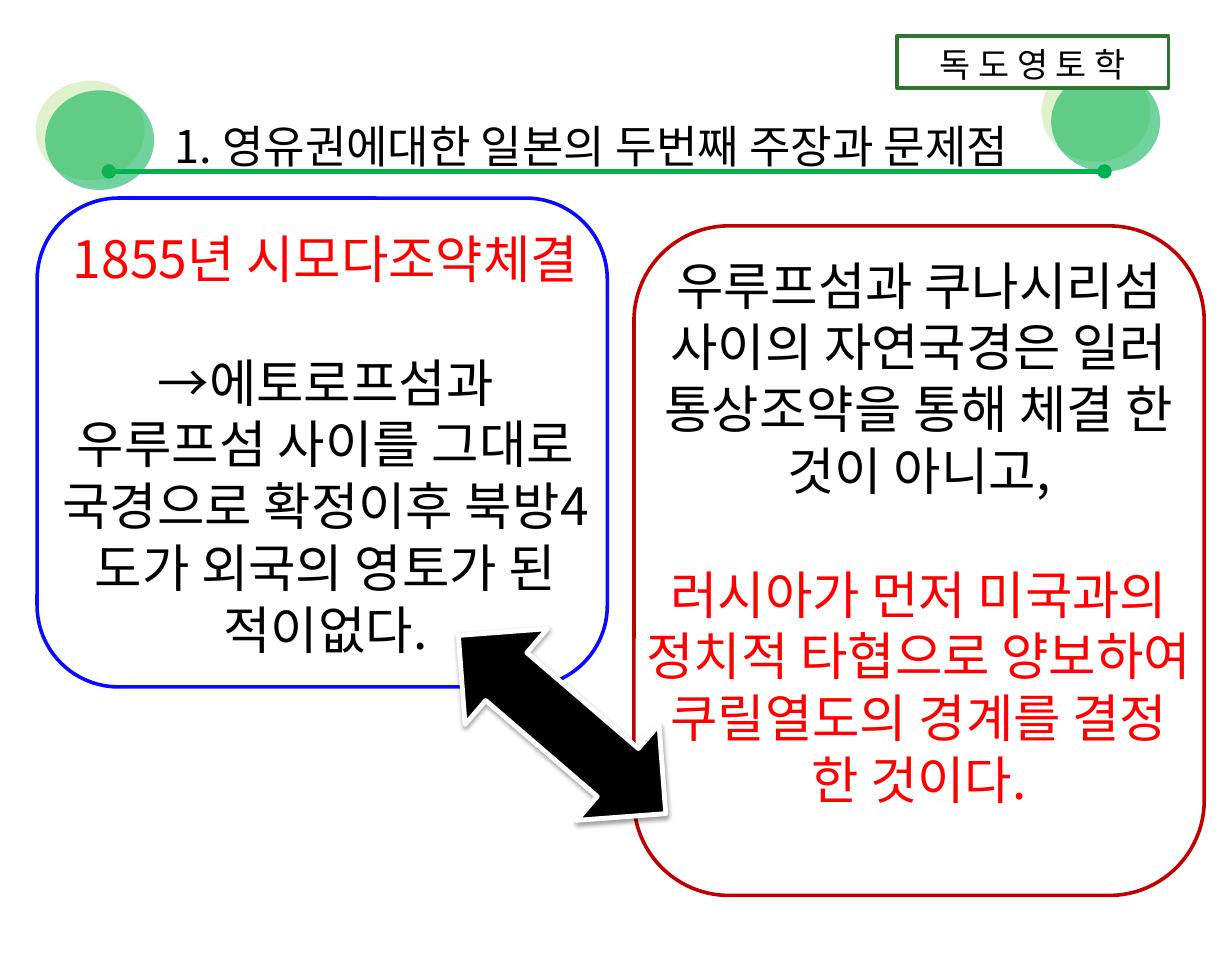
from lxml.etree import SubElement
from pptx import Presentation
from pptx.dml.color import RGBColor
from pptx.enum.shapes import MSO_CONNECTOR, MSO_SHAPE
from pptx.enum.text import MSO_ANCHOR, PP_ALIGN
from pptx.oxml.ns import qn
from pptx.util import Inches, Pt

COLORS = {
    "black": "000000", "white": "FFFFFF", "red": "FF0000", "green": "00B050",
    "lime": "92D050", "forest": "307433", "blue": "0A0AFF", "crimson": "C00000",
}
FONT = "Noto Sans CJK KR"


def rgb(name):
    return RGBColor.from_string(COLORS[name])


def add_alpha(color, percent):
    SubElement(color, qn("a:alpha"), val=str(percent * 1000))


class SlideBuilder:
    def __init__(self, prs):
        self.s = prs.slides.add_slide(prs.slide_layouts[6])

    def shape(self, kind, box, fill=None, line=None, width=2.25, alpha=None):
        sp = self.s.shapes.add_shape(kind, *map(Inches, box))
        sp.shadow.inherit = False
        if fill:
            sp.fill.solid()
            sp.fill.fore_color.rgb = rgb(fill)
        else:
            sp.fill.background()
        if alpha:
            add_alpha(sp._element.spPr.find(qn("a:solidFill"))[0], alpha)
        if line:
            sp.line.color.rgb = rgb(line)
            sp.line.width = Pt(width)
        else:
            sp.line.fill.background()
        return sp

    def shadow(self, sp, color, alpha, blur, dist, angle):
        effects = sp._element.spPr.find(qn("a:effectLst"))
        outer = SubElement(effects, qn("a:outerShdw"), blurRad=str(Pt(blur)),
                           dist=str(Pt(dist)), dir=str(angle * 60000),
                           algn="ctr", rotWithShape="0")
        add_alpha(SubElement(outer, qn("a:srgbClr"), val=COLORS[color]), alpha)

    def circle(self, left, top):
        sp = self.shape(MSO_SHAPE.OVAL, (left, top, 0.94, 0.86), "green", alpha=56)
        self.shadow(sp, "lime", 50, 0, 8.5, 225)

    def rule(self, x1, x2, y):
        """Horizontal line with a dot at each end."""
        line = self.s.shapes.add_connector(
            MSO_CONNECTOR.STRAIGHT, Inches(x1), Inches(y), Inches(x2), Inches(y))
        line.line.color.rgb = rgb("green")
        line.line.width = Pt(3)
        ln = line._element.spPr.find(qn("a:ln"))
        for end in ("a:headEnd", "a:tailEnd"):
            SubElement(ln, qn(end), type="oval")
        SubElement(line._element.spPr, qn("a:effectLst"))

    def add_text(self, sp, paragraphs, size, align=PP_ALIGN.CENTER):
        """Fill a shape with (text, color) paragraphs, one line apart."""
        tf = sp.text_frame
        tf.word_wrap = True
        tf.margin_top = Inches(0.09)
        for i, (text, color) in enumerate(paragraphs):
            p = tf.add_paragraph() if i else tf.paragraphs[0]
            p.alignment = align
            p.line_spacing = Pt(size * 1.2)
            if i:
                p.space_before = Pt(size * 1.2)
            r = p.add_run()
            r.text = text
            r.font.size = Pt(size)
            r.font.name = FONT
            r.font.color.rgb = rgb(color)
            SubElement(r.font._element, qn("a:ea"), typeface=FONT)

    def text_box(self, box, paragraphs, size, align=PP_ALIGN.CENTER):
        sp = self.s.shapes.add_textbox(*map(Inches, box))
        sp.text_frame.vertical_anchor = MSO_ANCHOR.TOP
        self.add_text(sp, paragraphs, size, align)


def main():
    prs = Presentation()
    prs.slide_width, prs.slide_height = Inches(10.63), Inches(8.27)
    b = SlideBuilder(prs)

    b.rule(0.94, 9.53, 1.48)
    b.circle(9.07, 0.62)
    b.text_box((1.41, 0.93, 7.73, 0.57),
               [("1. 영유권에대한 일본의 두번째 주장과 문제점", "black")],
               28, PP_ALIGN.LEFT)
    b.shape(MSO_SHAPE.ROUNDED_RECTANGLE, (0.32, 1.71, 4.92, 4.22), line="blue")
    header = b.shape(MSO_SHAPE.RECTANGLE, (7.74, 0.31, 2.34, 0.45),
                     "white", "forest", 2)
    b.add_text(header, [("독 도 영 토 학", "black")], 21)
    b.text_box((0.41, 1.87, 4.8, 3.87), [
        ("1855년 시모다조약체결", "red"),
        ("→에토로프섬과 우루프섬 사이를 그대로 국경으로 확정이후 "
         "북방4도가 외국의 영토가 된 적이없다.", "black"),
    ], 32)
    b.circle(0.39, 0.78)
    b.shape(MSO_SHAPE.ROUNDED_RECTANGLE, (5.47, 1.95, 4.92, 5.78), line="crimson")
    b.text_box((5.47, 2.1, 4.92, 4.95), [
        ("우루프섬과 쿠나시리섬 사이의 자연국경은 일러 통상조약을 통해 "
         "체결 한 것이 아니고,", "black"),
        ("러시아가 먼저 미국과의 정치적 타협으로 양보하여 쿠릴열도의 "
         "경계를 결정 한 것이다.", "red"),
    ], 32)
    arrow = b.shape(MSO_SHAPE.LEFT_RIGHT_ARROW, (3.67, 5.71, 2.36, 1.09),
                    "black", "white", 3)
    arrow.rotation = 40.7
    b.shadow(arrow, "black", 38, 3.1, 1.6, 90)

    prs.save("out.pptx")


if __name__ == "__main__":
    main()
